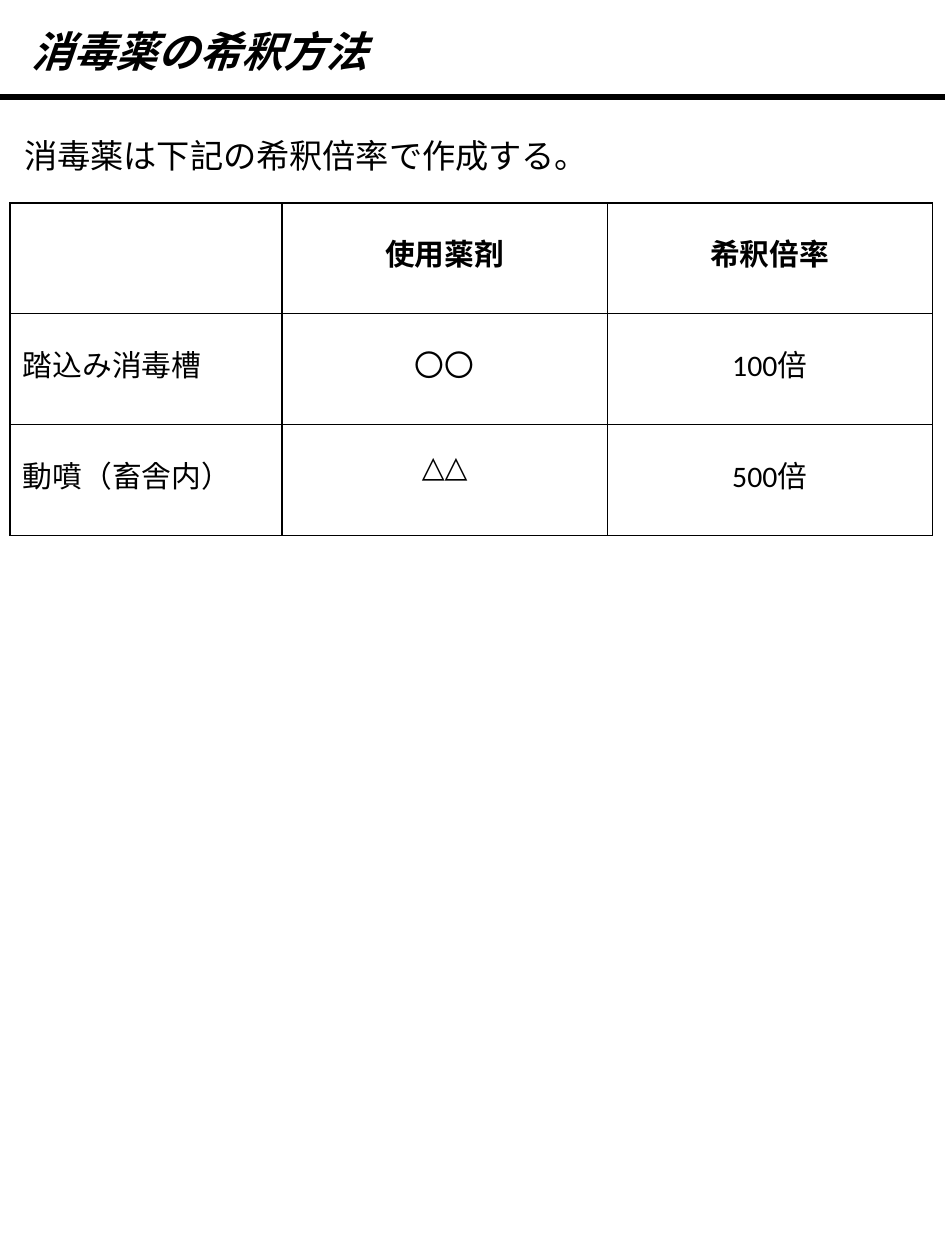
from lxml import etree
from pptx import Presentation
from pptx.dml.color import RGBColor
from pptx.enum.shapes import MSO_CONNECTOR, MSO_SHAPE
from pptx.enum.text import MSO_ANCHOR, PP_ALIGN
from pptx.oxml.ns import qn
from pptx.util import Inches, Pt

BLACK = RGBColor(0, 0, 0)
WHITE = RGBColor(255, 255, 255)
STRAIGHT = MSO_CONNECTOR.STRAIGHT
ROUNDED = MSO_SHAPE.ROUNDED_RECTANGLE
TOP, MIDDLE = MSO_ANCHOR.TOP, MSO_ANCHOR.MIDDLE
LEFT, CENTER = PP_ALIGN.LEFT, PP_ALIGN.CENTER

TITLE_FONT = {"name": "Arial", "size": Pt(24), "bold": True, "italic": True}
LEAD_FONT = {"name": "Arial", "size": Pt(19)}
CELL_FONT = {"name": "Calibri", "size": Pt(17)}

COLUMN_WIDTHS = [2.16, 2.58, 2.58]
ROW_HEIGHT = 0.88
DILUTIONS = [
    ["", "使用薬剤", "希釈倍率"],
    ["踏込み消毒槽", "〇〇", "100倍"],
    ["動噴（畜舎内）", "△△", "500倍"],
]


def write_text(frame, text, font, align=LEFT, spacing=None):
    para = frame.paragraphs[0]
    para.alignment = align
    para.line_spacing = spacing
    span = para.add_run()
    span.text = text
    for name, value in font.items():
        setattr(span.font, name, value)
    span.font.color.rgb = BLACK


def add_title(slide, text):
    title = slide.shapes.title
    title.left, title.top = Inches(0.13), Inches(0.14)
    title.width, title.height = Inches(5.2), Inches(0.53)
    frame = title.text_frame
    frame.vertical_anchor = MIDDLE
    frame.margin_left = frame.margin_right = Inches(0.12)
    frame.margin_top = frame.margin_bottom = Inches(0.06)
    write_text(frame, text, TITLE_FONT)


def add_rule(slide, width):
    rule = slide.shapes.add_connector(
        STRAIGHT, 0, Inches(0.77), width, Inches(0.77))
    rule.line.color.rgb = BLACK
    rule.line.width = Pt(3)
    etree.SubElement(rule._element.spPr, qn("a:effectLst"))


def add_lead(slide, text):
    box = slide.shapes.add_shape(
        ROUNDED, Inches(0.08), Inches(1.01), Inches(7.34), Inches(0.84))
    box.adjustments[0] = 0.06
    box.shadow.inherit = False
    box.fill.background()
    box.line.fill.background()
    box.text_frame.word_wrap = True
    box.text_frame.vertical_anchor = TOP
    write_text(box.text_frame, text, LEAD_FONT)


def add_borders(cell):
    properties = cell._tc.get_or_add_tcPr()
    for side in ("a:lnL", "a:lnR", "a:lnT", "a:lnB"):
        border = etree.SubElement(properties, qn(side), w=str(Pt(1)))
        fill = etree.SubElement(border, qn("a:solidFill"))
        etree.SubElement(fill, qn("a:srgbClr"), val=str(BLACK))


def add_dilution_table(slide):
    table = slide.shapes.add_table(
        len(DILUTIONS), len(COLUMN_WIDTHS), Inches(0.08), Inches(1.61),
        Inches(sum(COLUMN_WIDTHS)), Inches(ROW_HEIGHT * len(DILUTIONS))).table
    for column, width in zip(table.columns, COLUMN_WIDTHS):
        column.width = Inches(width)
    for row_index, labels in enumerate(DILUTIONS):
        table.rows[row_index].height = Inches(ROW_HEIGHT)
        for column_index, label in enumerate(labels):
            cell = table.cell(row_index, column_index)
            add_borders(cell)
            cell.fill.solid()
            cell.fill.fore_color.rgb = WHITE
            if label:
                font = {**CELL_FONT, "bold": row_index == 0}
                align = CENTER if column_index else LEFT
                write_text(cell.text_frame, label, font, align, 1.5)


def main():
    deck = Presentation()
    deck.slide_width, deck.slide_height = Inches(7.5), Inches(10)
    slide = deck.slides.add_slide(deck.slide_layouts.get_by_name("Title Only"))
    add_rule(slide, deck.slide_width)
    add_title(slide, "消毒薬の希釈方法")
    add_lead(slide, "消毒薬は下記の希釈倍率で作成する。")
    add_dilution_table(slide)
    deck.save("out.pptx")


if __name__ == "__main__":
    main()
